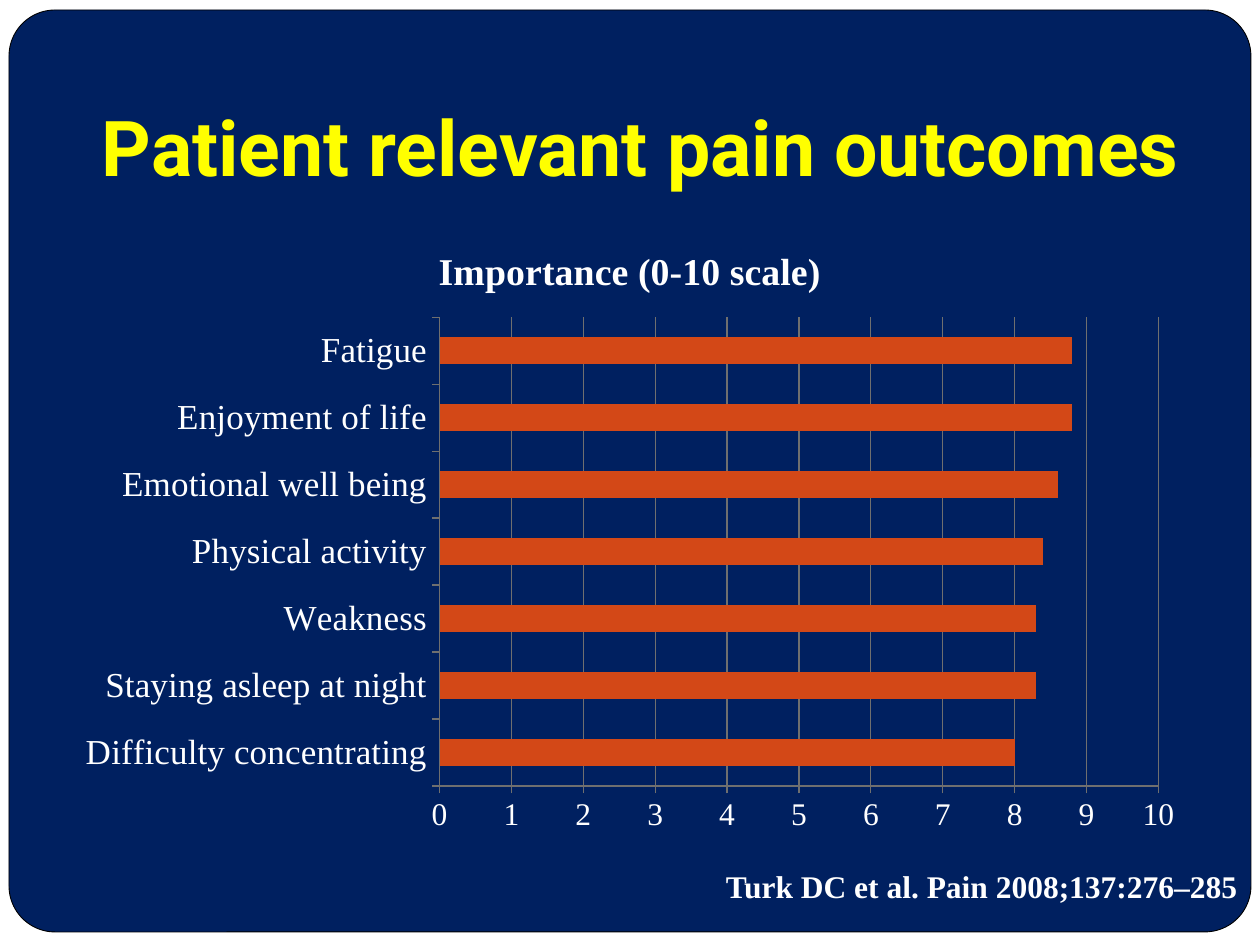
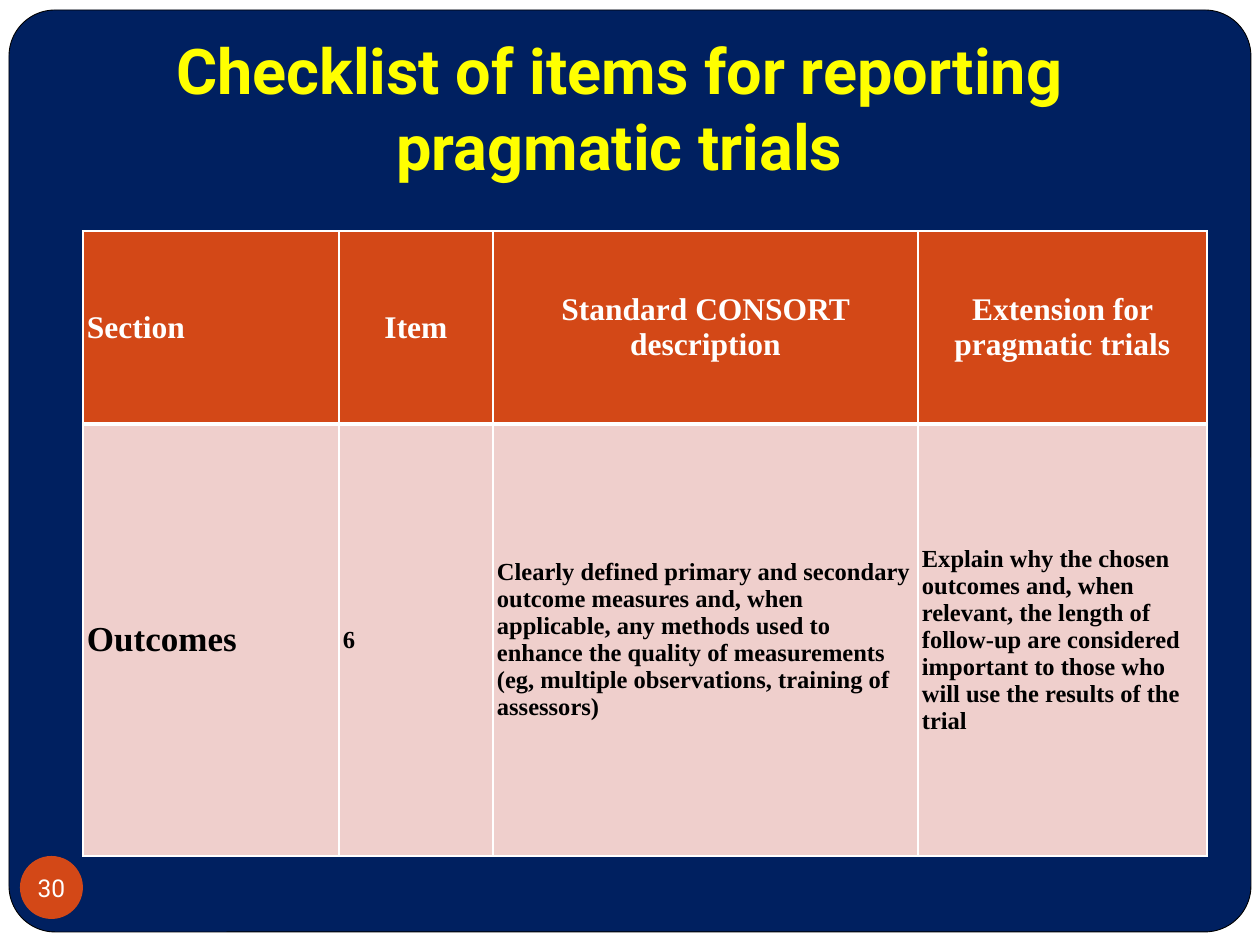
from lxml import etree
from pptx import Presentation
from pptx.chart.data import CategoryChartData
from pptx.dml.color import RGBColor
from pptx.enum.chart import XL_CHART_TYPE, XL_TICK_MARK
from pptx.enum.shapes import MSO_SHAPE
from pptx.enum.text import MSO_ANCHOR, MSO_AUTO_SIZE, PP_ALIGN
from pptx.oxml.ns import qn
from pptx.util import Emu, Pt

LEFT, CENTER, RIGHT = PP_ALIGN.LEFT, PP_ALIGN.CENTER, PP_ALIGN.RIGHT
TOP, MIDDLE, BOTTOM = MSO_ANCHOR.TOP, MSO_ANCHOR.MIDDLE, MSO_ANCHOR.BOTTOM
RECTANGLE, ROUNDED = MSO_SHAPE.RECTANGLE, MSO_SHAPE.ROUNDED_RECTANGLE
OVAL = MSO_SHAPE.OVAL
BAR_CLUSTERED = XL_CHART_TYPE.BAR_CLUSTERED
TICK_OUTSIDE = XL_TICK_MARK.OUTSIDE
NO_AUTOFIT = MSO_AUTO_SIZE.NONE

PIXELS_PER_INCH = 126
SLIDE_SIZE = (1260, 945)
HEADING_FONT, BODY_FONT = "Roboto", "Times New Roman"
WHITE, BLACK, NAVY, YELLOW = "FFFFFF", "000000", "002060", "FFFF00"
ORANGE, PINK, GRAY = "D34817", "EFCFCC", "6F6F6F"

OUTCOMES = {
    "title": "Patient relevant pain outcomes",
    "title_box": (53, 47, 1176, 158),
    "title_size": 44,
    "chart_title": "Importance (0-10 scale)",
    "chart_box": (63, 221, 1134, 624),
    "ratings": [
        ("Difficulty concentrating", 8),
        ("Staying asleep at night", 8.3),
        ("Weakness", 8.3),
        ("Physical activity", 8.4),
        ("Emotional well being", 8.6),
        ("Enjoyment of life", 8.8),
        ("Fatigue", 8.8),
    ],
    "citation": "Turk DC et al. Pain 2008;137:276–285",
    "citation_box": (378, 861, 872, 50),
}
CHECKLIST = {
    "title": "Checklist of items for reporting pragmatic trials",
    "title_box": (42, 38, 1155, 158),
    "title_size": 36,
    "number": "30",
    "number_box": (20, 856, 63, 63),
    "table_corner": (83, 231),
    "columns": [256, 154, 425, 289],
    "rows": [193, 432],
    "header": ["Section", "Item", "Standard CONSORT description",
               "Extension for pragmatic trials"],
    "header_aligns": [LEFT, CENTER, CENTER, CENTER],
    "entry": [
        "Outcomes",
        "6",
        "Clearly defined primary and secondary outcome measures and, when "
        "applicable, any methods used to enhance the quality of measurements "
        "(eg, multiple observations, training of assessors)",
        "Explain why the chosen outcomes and, when relevant, the length of "
        "follow-up are considered important to those who will use the results "
        "of the trial",
    ],
    "entry_sizes": [20, 14, 14, 14],
}


def px(length):
    return Emu(round(length * 914400 / PIXELS_PER_INCH))


def box(lengths):
    return [px(length) for length in lengths]


def color(hex_string):
    return RGBColor.from_string(hex_string)


def style_font(font, size, hex_string, name=BODY_FONT, bold=False):
    font.size = Pt(size)
    font.name = name
    font.bold = bold
    font.color.rgb = color(hex_string)


def write(frame, text, size=18, fill=WHITE, name=BODY_FONT, bold=True,
          align=LEFT, anchor=TOP, insets=None, wrap=True):
    frame.word_wrap = wrap
    frame.auto_size = NO_AUTOFIT
    frame.vertical_anchor = anchor
    if insets:
        (frame.margin_left, frame.margin_top,
         frame.margin_right, frame.margin_bottom) = box(insets)
    paragraph = frame.paragraphs[0]
    paragraph.alignment = align
    run = paragraph.add_run()
    run.text = text
    style_font(run.font, size, fill, name, bold)


def add_shape(slide, kind, bounds, fill, line=None):
    shape = slide.shapes.add_shape(kind, *box(bounds))
    shape.shadow.inherit = False
    shape.fill.solid()
    shape.fill.fore_color.rgb = color(fill)
    if line:
        shape.line.color.rgb = color(line)
        shape.line.width = Pt(0.5)
    else:
        shape.line.fill.background()
    return shape


def build_master(presentation, slide):
    backdrop = add_shape(slide, RECTANGLE, (0, 0, *SLIDE_SIZE), WHITE)
    panel = add_shape(slide, ROUNDED, (9, 10, 1242, 922), NAVY, BLACK)
    panel.adjustments[0] = 0.05
    tree = presentation.slide_master.shapes.element
    for index, shape in enumerate((backdrop, panel)):
        shape.element.nvSpPr.cNvPr.set("id", str(100 + index))
        tree.insert(2 + index, shape.element)


def add_slide(presentation, content):
    slide = presentation.slides.add_slide(presentation.slide_layouts[5])
    slide.background.fill.solid()
    slide.background.fill.fore_color.rgb = color(NAVY)
    title = slide.shapes.title
    title.left, title.top, title.width, title.height = box(content["title_box"])
    write(title.text_frame, content["title"], size=content["title_size"],
          fill=YELLOW, name=HEADING_FONT, align=CENTER, anchor=BOTTOM,
          insets=(13, 6, 13, 13))
    return slide


def add_ratings_chart(slide, content):
    data = CategoryChartData()
    labels, values = zip(*content["ratings"])
    data.categories = labels
    data.add_series(content["chart_title"], values)
    chart = slide.shapes.add_chart(
        BAR_CLUSTERED, *box(content["chart_box"]), data).chart
    style_font(chart.font, 18, BLACK)
    chart.has_legend = False
    chart.has_title = True
    paragraph = chart.chart_title.text_frame.paragraphs[0]
    run = paragraph.add_run()
    run.text = content["chart_title"]
    style_font(run.font, 21.6, WHITE, bold=True)
    chart.chart_title.include_in_layout = False

    plot = chart.plots[0]
    plot.gap_width = 150
    plot.vary_by_categories = False
    bars = plot.series[0].format.fill
    bars.solid()
    bars.fore_color.rgb = color(ORANGE)

    value_axis = chart.value_axis
    value_axis.minimum_scale, value_axis.maximum_scale = 0, 10
    value_axis.major_unit = 1
    value_axis.has_major_gridlines = True
    for axis, size in ((chart.category_axis, 20), (value_axis, 18)):
        axis.major_tick_mark = TICK_OUTSIDE
        style_font(axis.tick_labels.font, size, WHITE)
    for part in (chart.category_axis, value_axis, value_axis.major_gridlines):
        part.format.line.color.rgb = color(GRAY)
        part.format.line.width = Pt(0.75)


def set_borders(cell, **widths):
    properties = cell._tc.get_or_add_tcPr()
    for side in "LRTB":
        line = etree.SubElement(properties, qn(f"a:ln{side}"),
                                w=str(Pt(widths.get(side, 1))))
        fill = etree.SubElement(line, qn("a:solidFill"))
        etree.SubElement(fill, qn("a:srgbClr"), val=WHITE)


def fill_cell(cell, text, fill, borders, **text_format):
    set_borders(cell, **borders)
    cell.fill.solid()
    cell.fill.fore_color.rgb = color(fill)
    cell.vertical_anchor = MIDDLE
    (cell.margin_left, cell.margin_top,
     cell.margin_right, cell.margin_bottom) = box((4, 4, 4, 4))
    paragraph = cell.text_frame.paragraphs[0]
    paragraph.alignment = text_format.pop("align", LEFT)
    run = paragraph.add_run()
    run.text = text
    style_font(run.font, bold=True, **text_format)


def add_checklist_table(slide, content):
    columns, rows = content["columns"], content["rows"]
    bounds = (*content["table_corner"], sum(columns), sum(rows))
    table = slide.shapes.add_table(len(rows), len(columns), *box(bounds)).table
    for column, width in zip(table.columns, columns):
        column.width = px(width)
    for row, height in zip(table.rows, rows):
        row.height = px(height)
    for index, (text, align) in enumerate(
            zip(content["header"], content["header_aligns"])):
        fill_cell(table.cell(0, index), text, ORANGE, {"B": 3},
                  size=18, hex_string=WHITE, align=align)
    for index, (text, size) in enumerate(
            zip(content["entry"], content["entry_sizes"])):
        fill_cell(table.cell(1, index), text, PINK, {"T": 3},
                  size=size, hex_string=BLACK)


def build_outcomes(presentation):
    slide = add_slide(presentation, OUTCOMES)
    build_master(presentation, slide)
    add_ratings_chart(slide, OUTCOMES)
    citation = slide.shapes.add_textbox(*box(OUTCOMES["citation_box"]))
    write(citation.text_frame, OUTCOMES["citation"], align=RIGHT)


def build_checklist(presentation):
    slide = add_slide(presentation, CHECKLIST)
    badge = add_shape(slide, OVAL, CHECKLIST["number_box"], ORANGE)
    write(badge.text_frame, CHECKLIST["number"], size=14, name=HEADING_FONT,
          bold=False, align=CENTER, anchor=MIDDLE, insets=(0, 0, 0, 0),
          wrap=False)
    add_checklist_table(slide, CHECKLIST)


def main():
    presentation = Presentation()
    presentation.slide_width, presentation.slide_height = box(SLIDE_SIZE)
    build_outcomes(presentation)
    build_checklist(presentation)
    presentation.save("out.pptx")


if __name__ == "__main__":
    main()
